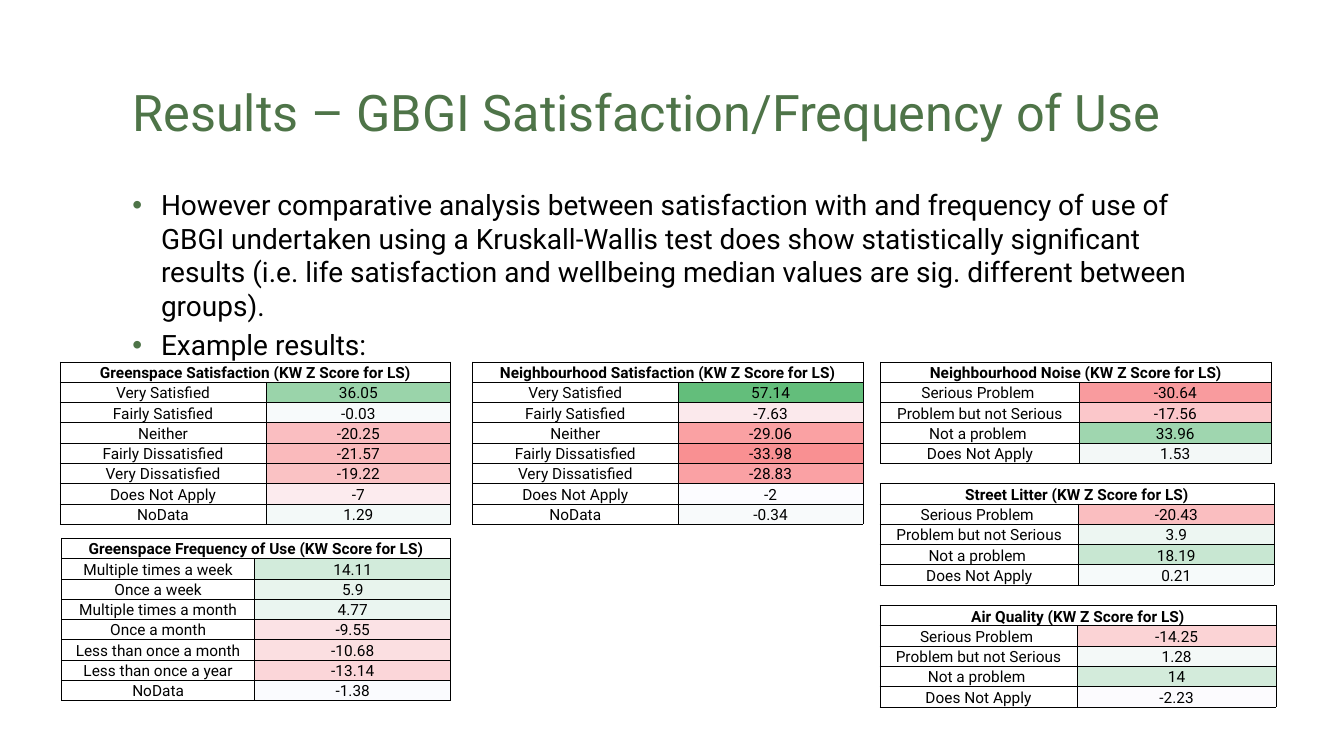
from lxml import etree
from pptx import Presentation
from pptx.dml.color import RGBColor
from pptx.enum.text import MSO_ANCHOR, MSO_AUTO_SIZE, PP_ALIGN
from pptx.oxml.ns import qn
from pptx.util import Pt

LEFT, CENTER = PP_ALIGN.LEFT, PP_ALIGN.CENTER
TOP, BOTTOM = MSO_ANCHOR.TOP, MSO_ANCHOR.BOTTOM
NO_AUTOFIT = MSO_AUTO_SIZE.NONE

GREEN = RGBColor(0x4E, 0x74, 0x48)
BLACK = RGBColor(0, 0, 0)
WHITE = RGBColor(255, 255, 255)
SCORE_LOW = RGBColor(0xF8, 0x69, 0x6B)
SCORE_MIDDLE = RGBColor(0xFC, 0xFC, 0xFF)
SCORE_HIGH = RGBColor(0x63, 0xBE, 0x7B)
LOWEST, MIDDLE, HIGHEST = -45.5, -2, 57.14

SATISFACTION = ["Very Satisfied", "Fairly Satisfied", "Neither", "Fairly Dissatisfied",
                "Very Dissatisfied", "Does Not Apply", "NoData"]
FREQUENCY = ["Multiple times a week", "Once a week", "Multiple times a month", "Once a month",
             "Less than once a month", "Less than once a year", "NoData"]
PROBLEM = ["Serious Problem ", "Problem but not Serious", "Not a problem ", "Does Not Apply"]

TABLE_TOP = 258.5
PROBLEM_STEP = 87

# heading, left, top, column widths, labels, scores
SCORE_TABLES = [
    ("Neighbourhood Satisfaction (KW Z Score for LS)", 337.5, TABLE_TOP, (147, 132),
     SATISFACTION, [57.14, -7.63, -29.06, -33.98, -28.83, -2, -0.34]),
    ("Greenspace Satisfaction (KW Z Score for LS)", 43, TABLE_TOP, (147, 132),
     SATISFACTION, [36.05, -0.03, -20.25, -21.57, -19.22, -7, 1.29]),
    ("Greenspace Frequency of Use (KW Score for LS)", 44, 384.5, (138, 140),
     FREQUENCY, [14.11, 5.9, 4.77, -9.55, -10.68, -13.14, -1.38]),
    ("Neighbourhood Noise (KW Z Score for LS)", 629, TABLE_TOP, (142, 137),
     PROBLEM, [-30.64, -17.56, 33.96, 1.53]),
    ("Street Litter (KW Z Score for LS)", 628.5, TABLE_TOP + PROBLEM_STEP, (142, 139.5),
     PROBLEM, [-20.43, 3.9, 18.19, 0.21]),
    ("Air Quality (KW Z Score for LS)", 628.5, TABLE_TOP + 2 * PROBLEM_STEP, (141, 142),
     PROBLEM, [-14.25, 1.28, 14, -2.23]),
]


def score_color(score):
    """Blend from the middle colour towards red or green by the size of the score."""
    end, color = (HIGHEST, SCORE_HIGH) if score > MIDDLE else (LOWEST, SCORE_LOW)
    share = (score - MIDDLE) / (end - MIDDLE)
    return RGBColor(*(round(a + (b - a) * share) for a, b in zip(SCORE_MIDDLE, color)))


def write(paragraph, text, size, color=BLACK, bold=False, align=LEFT,
          line_spacing=None, space_before=0):
    paragraph.alignment = align
    paragraph.space_before = Pt(space_before)
    if line_spacing:
        paragraph.line_spacing = Pt(line_spacing)
    run = paragraph.add_run()
    run.text = text
    run.font.name = "Roboto"
    run.font.size = Pt(size)
    run.font.bold = bold
    run.font.color.rgb = color


def add_bullet(paragraph, indent, color):
    properties = paragraph._p.get_or_add_pPr()
    properties.set("marL", str(Pt(indent)))
    properties.set("indent", str(-Pt(indent)))
    bullet_color = etree.SubElement(properties, qn("a:buClr"))
    etree.SubElement(bullet_color, qn("a:srgbClr"), val=str(color))
    etree.SubElement(properties, qn("a:buFont"), typeface="Arial")
    etree.SubElement(properties, qn("a:buChar"), char="•")


def add_borders(cell, width, color):
    properties = cell._tc.get_or_add_tcPr()
    for side in ("lnL", "lnR", "lnT", "lnB"):
        line = etree.SubElement(properties, qn(f"a:{side}"), w=str(Pt(width)))
        fill = etree.SubElement(line, qn("a:solidFill"))
        etree.SubElement(fill, qn("a:srgbClr"), val=str(color))


class ResultsSlide:
    title_size = 36
    body_size = 20
    table_size = 11
    row_height = 14.5
    border_width = 0.5

    def __init__(self, presentation):
        self.slide = presentation.slides.add_slide(presentation.slide_layouts[1])

    def place(self, placeholder, left, top, width, height):
        """Move a placeholder and return its text frame without margins."""
        placeholder.left, placeholder.top = Pt(left), Pt(top)
        placeholder.width, placeholder.height = Pt(width), Pt(height)
        frame = placeholder.text_frame
        frame.margin_left = frame.margin_right = frame.margin_top = frame.margin_bottom = 0
        frame.vertical_anchor = TOP
        frame.word_wrap = True
        frame.auto_size = NO_AUTOFIT
        return frame

    def title(self, text, *box):
        frame = self.place(self.slide.shapes.title, *box)
        write(frame.paragraphs[0], text, self.title_size, color=GREEN, line_spacing=47)

    def bullets(self, items, *box):
        frame = self.place(self.slide.placeholders[1], *box)
        for index, text in enumerate(items):
            paragraph = frame.add_paragraph() if index else frame.paragraphs[0]
            add_bullet(paragraph, 20.5, GREEN)
            write(paragraph, text, self.body_size, line_spacing=24,
                  space_before=4 if index else 0)

    def cell(self, cell, text, fill=WHITE, bold=False):
        cell.margin_left = cell.margin_right = cell.margin_top = Pt(0.75)
        cell.margin_bottom = 0
        cell.vertical_anchor = BOTTOM
        add_borders(cell, self.border_width, BLACK)
        cell.fill.solid()
        cell.fill.fore_color.rgb = fill
        write(cell.text_frame.paragraphs[0], text, self.table_size, bold=bold, align=CENTER)

    def score_table(self, heading, left, top, widths, labels, scores):
        row_count = len(labels) + 1
        table = self.slide.shapes.add_table(
            row_count, 2, Pt(left), Pt(top), Pt(sum(widths)),
            Pt(row_count * self.row_height)).table
        table.first_row = table.horz_banding = False
        for column, width in zip(table.columns, widths):
            column.width = Pt(width)
        for row in table.rows:
            row.height = Pt(self.row_height)
        heading_cell = table.cell(0, 0)
        heading_cell.merge(table.cell(0, 1))
        self.cell(heading_cell, heading, bold=True)
        add_borders(table.cell(0, 1), self.border_width, BLACK)
        for row, (label, score) in enumerate(zip(labels, scores), start=1):
            self.cell(table.cell(row, 0), label)
            self.cell(table.cell(row, 1), str(score), fill=score_color(score))


def main():
    presentation = Presentation()
    presentation.slide_width, presentation.slide_height = Pt(960), Pt(540)
    results = ResultsSlide(presentation)
    results.title("Results – GBGI Satisfaction/Frequency of Use", 94.5, 54, 782.5, 80)
    results.bullets([
        "However comparative analysis between satisfaction with and frequency of use of GBGI "
        "undertaken using a Kruskall-Wallis test does show statistically significant results "
        "(i.e. life satisfaction and wellbeing median values are sig. different between groups).",
        "Example results:",
    ], 94.5, 134, 782.5, 363)
    for score_table in SCORE_TABLES:
        results.score_table(*score_table)
    presentation.save("out.pptx")


if __name__ == "__main__":
    main()
